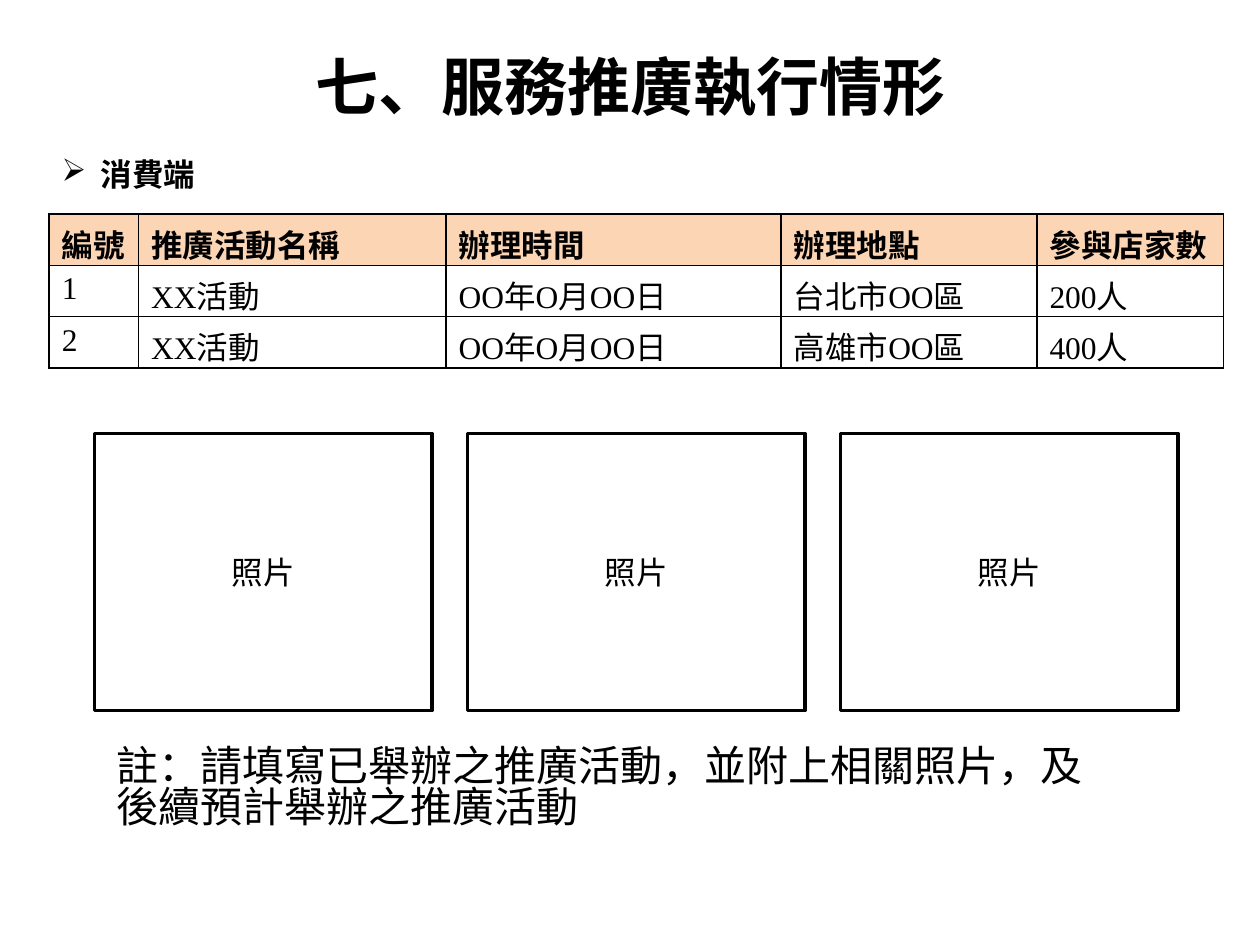
from lxml import etree
from pptx import Presentation
from pptx import util as u
from pptx.dml.color import RGBColor
from pptx.enum import shapes, text
from pptx.oxml import ns

BLACK = RGBColor(0, 0, 0)
WHITE = RGBColor(255, 255, 255)
PEACH = RGBColor(0xFC, 0xD5, 0xB5)
SANS = "Noto Sans CJK SC"
SERIF = "Times New Roman"
MIDDLE = text.MSO_ANCHOR.MIDDLE
CENTER = text.PP_ALIGN.CENTER
HEADER = ["編號", "推廣活動名稱", "辦理時間", "辦理地點", "參與店家數"]
ACTIVITIES = [
    ["1", "XX活動", "OO年O月OO日", "台北市OO區", "200人"],
    ["2", "XX活動", "OO年O月OO日", "高雄市OO區", "400人"],
]
COLUMN_WIDTHS = [0.71, 2.44, 2.66, 2.03, 1.48]


def inches(box):
    return [u.Inches(length) for length in box]


def write(frame, words, size=18, name=SANS, bold=False, align=None):
    para = frame.paragraphs[0]
    if align is not None:
        para.alignment = align
    span = para.add_run()
    span.text = words
    values = {"size": u.Pt(size), "name": name, "bold": bold}
    for key, value in values.items():
        setattr(span.font, key, value)
    span.font.color.rgb = BLACK
    east = etree.SubElement(span.font._element, ns.qn("a:ea"))
    east.set("typeface", SANS)
    return para


def add_title(page, box):
    title = page.shapes.title
    title.left, title.top, title.width, title.height = inches(box)
    title.text_frame.vertical_anchor = MIDDLE
    write(title.text_frame, "七、服務推廣執行情形", 36, bold=True, align=CENTER)


def add_heading(page, box):
    frame = page.shapes.add_textbox(*inches(box)).text_frame
    frame.word_wrap = False
    frame.auto_size = text.MSO_AUTO_SIZE.SHAPE_TO_FIT_TEXT
    para = write(frame, "消費端", bold=True)
    properties = para._p.get_or_add_pPr()
    indent = u.Inches(0.31)
    properties.set("marL", str(indent))
    properties.set("indent", str(-indent))
    etree.SubElement(properties, ns.qn("a:buChar")).set("char", "➢")


def add_borders(cell):
    properties = cell._tc.get_or_add_tcPr()
    for position, side in enumerate(["lnL", "lnR", "lnT", "lnB"]):
        line = etree.Element(ns.qn("a:" + side), w=str(u.Pt(1)))
        fill = etree.SubElement(line, ns.qn("a:solidFill"))
        etree.SubElement(fill, ns.qn("a:srgbClr")).set("val", str(BLACK))
        properties.insert(position, line)


def add_activity_table(page, box):
    rows = [HEADER] + ACTIVITIES
    table = page.shapes.add_table(len(rows), len(HEADER), *inches(box)).table
    for column, width in zip(table.columns, COLUMN_WIDTHS):
        column.width = u.Inches(width)
    for row_number, row in enumerate(rows):
        is_header = row_number == 0
        for column_number, words in enumerate(row):
            cell = table.cell(row_number, column_number)
            cell.margin_bottom = 0
            cell.fill.solid()
            cell.fill.fore_color.rgb = PEACH if is_header else WHITE
            write(cell.text_frame, words, name=SERIF, bold=is_header)
            add_borders(cell)


def add_photo_frames(page, box, count=3, gap=0.28):
    left, top, width, height = box
    frame_width = (width - gap * (count - 1)) / count
    for number in range(count):
        place = (left + number * (frame_width + gap), top, frame_width, height)
        photo = page.shapes.add_shape(shapes.MSO_SHAPE.RECTANGLE, *inches(place))
        photo.shadow.inherit = False
        photo.fill.solid()
        photo.fill.fore_color.rgb = WHITE
        photo.line.color.rgb = BLACK
        photo.line.width = u.Pt(2)
        photo.text_frame.vertical_anchor = MIDDLE
        write(photo.text_frame, "照片", align=CENTER)


def add_note(page, box):
    frame = page.shapes.add_textbox(*inches(box)).text_frame
    frame.word_wrap = True
    frame.vertical_anchor = MIDDLE
    para = write(frame, "註：請填寫已舉辦之推廣活動，並附上相關照片，及後續預計舉辦之推廣活動", 24)
    para.line_spacing = 0.81


def main():
    deck = Presentation()
    deck.slide_width, deck.slide_height = inches((10, 7.5))
    page = deck.slides.add_slide(deck.slide_layouts[5])
    add_title(page, (0, 0.29, 10, 0.78))
    add_note(page, (0.83, 5.64, 8.03, 1.26))
    add_activity_table(page, (0.39, 1.7, 9.32, 1.22))
    add_photo_frames(page, (0.75, 3.44, 8.6, 2.2))
    add_heading(page, (0.39, 1.18, 1.27, 0.4))
    deck.save("out.pptx")


if __name__ == "__main__":
    main()
